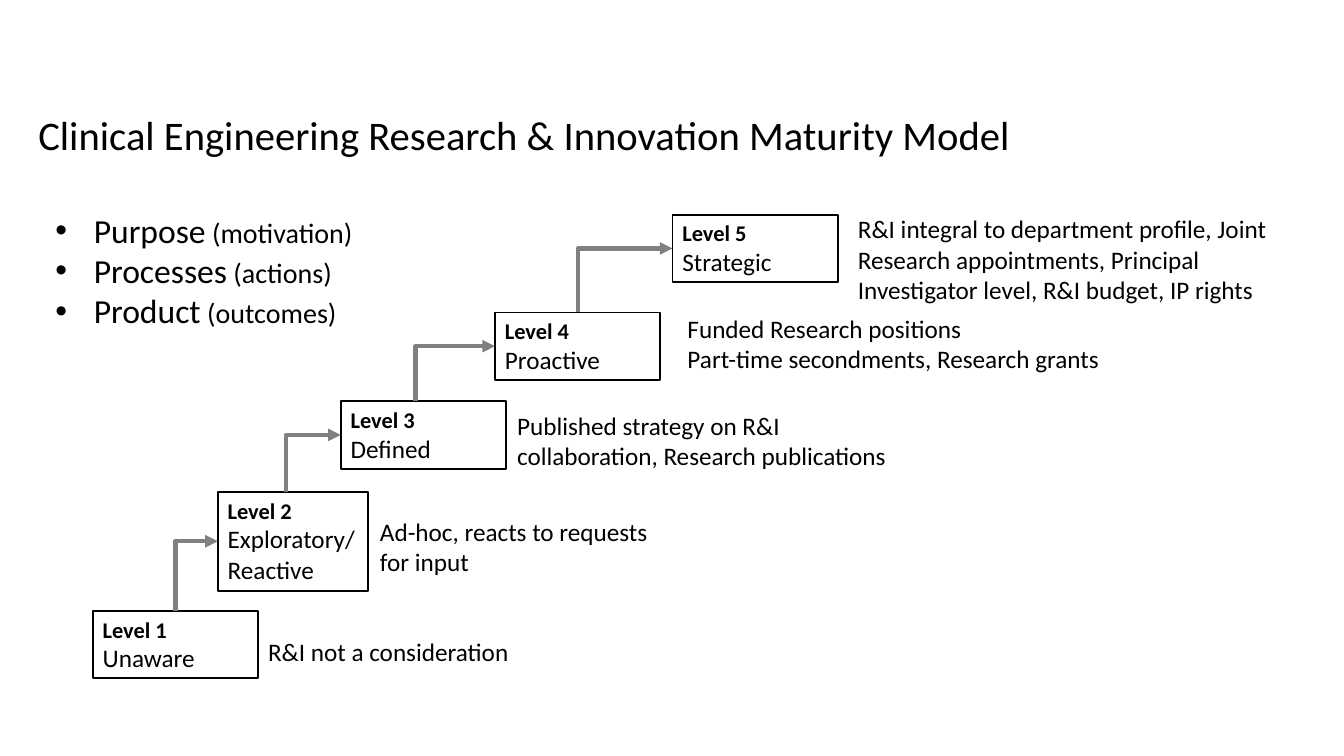
"""Build the Clinical Engineering Research & Innovation Maturity Model slide."""
import pptx
import pptx.dml.color
import pptx.enum.shapes
import pptx.enum.text
import pptx.oxml.ns
import pptx.util
from lxml import etree

Inches = pptx.util.Inches
FONT = "Calibri"
COLORS = {"text": "000000", "arrow": "808080"}
TITLE = "Clinical Engineering Research & Innovation Maturity Model"
ASPECTS = [("Purpose", " (motivation)"), ("Processes", " (actions)"), ("Product", " (outcomes)")]

# name, box (left, top, width, height), x of the arrow leaving it, notes, notes box
LEVELS = [
    ("Unaware", (0.92, 6.06, 1.64, 0.67), 1.74,
     ["R&I not a consideration"], (2.56, 6.26, 2.89, 0.4)),
    ("Exploratory/Reactive", (2.16, 4.88, 1.49, 0.98), 2.84,
     ["Ad-hoc, reacts to requests for input"], (3.67, 5.07, 3.08, 0.71)),
    ("Defined", (3.38, 3.98, 1.64, 0.67), 4.12,
     ["Published strategy on R&I collaboration, Research publications"],
     (5.03, 4.02, 4.09, 0.71)),
    ("Proactive", (4.91, 3.1, 1.64, 0.67), 5.73,
     ["Funded Research positions", "Part-time secondments, Research grants"],
     (6.72, 3.06, 4.72, 1.01)),
    ("Strategic", (6.67, 2.13, 1.64, 0.67), None,
     ["R&I integral to department profile, Joint Research appointments, "
      "Principal Investigator level, R&I budget, IP rights"], (8.41, 2.07, 4.45, 1.01)),
]


def rgb(name):
    """Return a named colour."""
    return pptx.dml.color.RGBColor.from_string(COLORS[name])


def place(sp, box):
    """Move and size a placeholder."""
    sp.left, sp.top, sp.width, sp.height = map(Inches, box)


def fill_text(sp, lines, anchor=pptx.enum.text.MSO_ANCHOR.TOP):
    """Write paragraphs, each a list of (text, size, bold) runs."""
    tf = sp.text_frame
    tf.word_wrap = True
    tf.auto_size = pptx.enum.text.MSO_AUTO_SIZE.NONE
    tf.vertical_anchor = anchor
    for i, runs in enumerate(lines):
        p = tf.add_paragraph() if i else tf.paragraphs[0]
        p.alignment = pptx.enum.text.PP_ALIGN.LEFT
        p.space_before = pptx.util.Pt(0)
        for text, size, bold in runs:
            r = p.add_run()
            r.text = text
            r.font.name = FONT
            r.font.size = pptx.util.Pt(size)
            r.font.bold = bold
            r.font.color.rgb = rgb("text")
    return tf


def add_step_arrow(slide, start, end):
    """Draw an elbow that rises from start and then runs right to end."""
    run, rise = end[0] - start[0], start[1] - end[1]
    cx, cy = (start[0] + end[0]) / 2, (start[1] + end[1]) / 2
    line = slide.shapes.add_connector(
        pptx.enum.shapes.MSO_CONNECTOR.ELBOW,
        Inches(cx + rise / 2), Inches(cy + run / 2),
        Inches(cx - rise / 2), Inches(cy - run / 2))
    line.line.color.rgb = rgb("arrow")
    line.line.width = pptx.util.Pt(3)
    qn = pptx.oxml.ns.qn
    props = line._element.spPr
    props.find(qn("a:xfrm")).set("rot", "5400000")
    props.find(qn("a:prstGeom")).set("prst", "bentConnector2")
    etree.SubElement(props.find(qn("a:ln")), qn("a:tailEnd"), type="triangle")
    etree.SubElement(props, qn("a:effectLst"))


def add_level(slide, number, name, box, notes, notes_box):
    """Draw one level box and the notes beside it."""
    sp = slide.shapes.add_shape(pptx.enum.shapes.MSO_SHAPE.RECTANGLE, *map(Inches, box))
    sp.shadow.inherit = False
    sp.fill.background()
    sp.line.color.rgb = rgb("text")
    sp.line.width = pptx.util.Pt(1.25)
    fill_text(sp, [[(f"Level {number}", 16, True)], [(name, 18, False)]])
    tb = slide.shapes.add_textbox(*map(Inches, notes_box))
    fill_text(tb, [[(note, 18, False)] for note in notes])


def main():
    """Assemble and save the slide."""
    prs = pptx.Presentation()
    prs.slide_width, prs.slide_height = Inches(13.33), Inches(7.5)
    slide = prs.slides.add_slide(prs.slide_layouts[1])
    title, body = slide.placeholders

    place(title, (0.28, 0.85, 10.87, 1.02))
    tf = fill_text(title, [[(TITLE, 29, False)]], pptx.enum.text.MSO_ANCHOR.MIDDLE)
    tf.paragraphs[0].line_spacing = 0.9

    place(body, (0.45, 2.03, 3.19, 1.31))
    tf = fill_text(body, [[(word, 24, False), (gloss, 20, False)] for word, gloss in ASPECTS])
    for p in tf.paragraphs:
        props = p._p.get_or_add_pPr()
        props.set("marL", str(Inches(0.38)))
        props.set("indent", str(-Inches(0.38)))
        etree.SubElement(props, pptx.oxml.ns.qn("a:buFont"), typeface="Arial")
        etree.SubElement(props, pptx.oxml.ns.qn("a:buChar"), char="•")

    for number, (name, box, _, notes, notes_box) in enumerate(LEVELS, 1):
        add_level(slide, number, name, box, notes, notes_box)
    for (_, box, arrow_x, _, _), (_, target, _, _, _) in zip(LEVELS, LEVELS[1:]):
        add_step_arrow(slide, (arrow_x, box[1]), (target[0], target[1] + target[3] / 2))

    prs.save("out.pptx")


if __name__ == "__main__":
    main()
